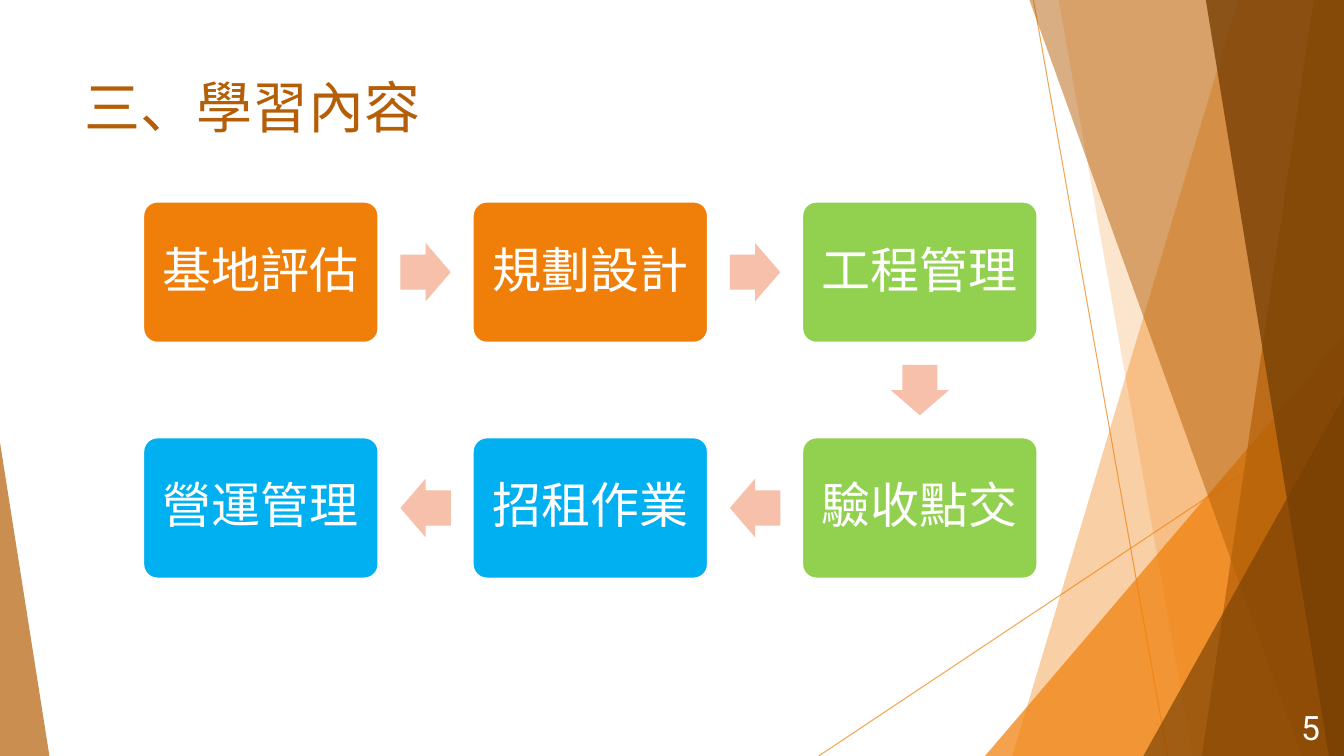
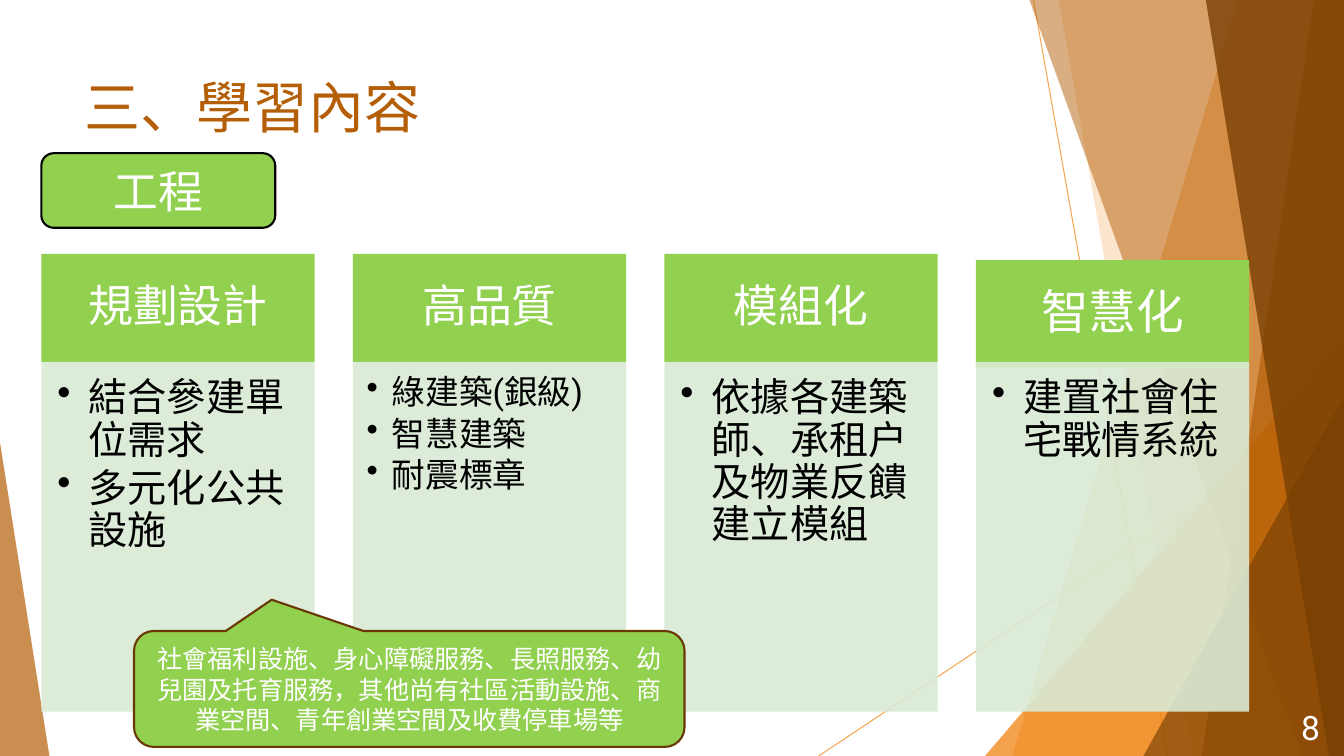
from dataclasses import dataclass
from itertools import pairwise

from lxml import etree
from pptx import Presentation
from pptx.dml.color import RGBColor
from pptx.enum.shapes import MSO_CONNECTOR, MSO_SHAPE
from pptx.enum.text import MSO_ANCHOR, PP_ALIGN
from pptx.oxml.ns import qn
from pptx.util import Inches, Pt

RECTANGLE = MSO_SHAPE.RECTANGLE
ROUNDED = MSO_SHAPE.ROUNDED_RECTANGLE
TRIANGLE = MSO_SHAPE.ISOSCELES_TRIANGLE
ARROW = MSO_SHAPE.RIGHT_ARROW
LABEL = MSO_SHAPE.FLOWCHART_ALTERNATE_PROCESS
CALLOUT = MSO_SHAPE.ROUNDED_RECTANGULAR_CALLOUT
STRAIGHT = MSO_CONNECTOR.STRAIGHT
LEFT, CENTER, RIGHT = PP_ALIGN.LEFT, PP_ALIGN.CENTER, PP_ALIGN.RIGHT
TOP, MIDDLE = MSO_ANCHOR.TOP, MSO_ANCHOR.MIDDLE

WIDTH, HEIGHT = 13.33, 7.5
TITLE = "三、學習內容"
TITLE_FONT, BODY_FONT = "Noto Sans CJK TC", "Roboto"
ORANGE, RUST, BROWN, DARK = "F07F09", "B45F07", "784004", "693804"
GREEN, BLUE, PALE, PINK = "92D050", "00B0F0", "D9EAD5", "F6C0AB"
WHITE, BLACK = "FFFFFF", "000000"
PLAIN_INSETS = (0.1, 0.05, 0.1, 0.05)
ARROW_SIZE = (0.5, 0.58)
HEADER_HEIGHT = 1.07

RAYS = [(10.25, 0, 11.58, HEIGHT), (WIDTH, 4.03, 8.12, HEIGHT)]
FACETS = [
    (12.28, 10.04, ORANGE, 36),
    (10.5, 11.83, ORANGE, 20),
    ((9.77, 3.33, 3.56, 4.17), 1, ORANGE, 72),
    (10.21, 12.91, RUST, 50),
    (13.03, 11.92, RUST, 70),
    (11.96, 13.18, BROWN, 80),
    ((11.34, 3.93, 1.99, 3.57), 1, BROWN, 66),
    ((0, 4.39, 0.49, 3.11), 0, RUST, 70),
]
STEPS = [
    ("基地評估", ORANGE, 0, 0),
    ("規劃設計", ORANGE, 1, 0),
    ("工程管理", GREEN, 2, 0),
    ("驗收點交", GREEN, 2, 1),
    ("招租作業", BLUE, 1, 1),
    ("營運管理", BLUE, 0, 1),
]
TOPICS = [
    ("規劃設計", 32, 0, ["結合參建單位需求", "多元化公共設施"], 28, 0.31),
    ("高品質", 32, 0, ["綠建築(銀級)", "智慧建築", "耐震標章"], 24, 0.25),
    ("模組化", 32, 0, ["依據各建築師、承租戶及物業反饋建立模組"], 28, 0.31),
    ("智慧化", 34, 0.06, ["建置社會住宅戰情系統"], 28, 0.31),
]
SERVICES = ("社會福利設施、身心障礙服務、長照服務、幼兒園及托育服務，"
            "其他尚有社區活動設施、商業空間、青年創業空間及收費停車場等")


@dataclass
class Box:
    """A rectangle in inches."""
    left: float
    top: float
    width: float
    height: float

    def cell(self, column, row, columns, rows, gap_x=0, gap_y=0):
        """Return a grid cell; gaps are shares of the cell size."""
        width = self.width / (columns + (columns - 1) * gap_x)
        height = self.height / (rows + (rows - 1) * gap_y)
        return Box(self.left + column * width * (1 + gap_x),
                   self.top + row * height * (1 + gap_y), width, height)

    def center(self):
        """Return the middle point."""
        return self.left + self.width / 2, self.top + self.height / 2

    def lengths(self):
        """Return the four lengths for python-pptx."""
        return [Inches(v) for v in (self.left, self.top, self.width, self.height)]


def paint(fill, color, alpha=100):
    """Give a fill a solid colour and an opacity in percent."""
    fill.solid()
    fill.fore_color.rgb = RGBColor.from_string(color)
    if alpha < 100:
        tone = fill._xPr.find(".//" + qn("a:srgbClr"))
        etree.SubElement(tone, qn("a:alpha"), val=str(alpha * 1000))


def finish(shape, color, alpha=100, line=None):
    """Set the fill and outline and drop the shadow."""
    shape.shadow.inherit = False
    paint(shape.fill, color, alpha)
    if line:
        paint(shape.line.fill, line)
        shape.line.width = Pt(1.5)
    else:
        shape.line.fill.background()
    return shape


def add_figure(page, kind, box, color, alpha=100, line=None, adjust=()):
    """Add a preset shape."""
    shape = page.shapes.add_shape(kind, *box.lengths())
    for index, value in enumerate(adjust):
        shape.adjustments[index] = value
    return finish(shape, color, alpha, line)


def write(shape, lines, size, color=WHITE, align=CENTER, anchor=MIDDLE,
          insets=PLAIN_INSETS, spacing=1.0, after=0, indent=0, font=BODY_FONT):
    """Fill a shape with paragraphs, bulleted when an indent is given."""
    frame = shape.text_frame
    frame.text = "\n".join(lines)
    frame.word_wrap = True
    frame.vertical_anchor = anchor
    (frame.margin_left, frame.margin_top,
     frame.margin_right, frame.margin_bottom) = map(Inches, insets)
    for para in frame.paragraphs:
        para.alignment = align
        para.line_spacing = spacing
        para.space_after = Pt(after)
        if indent:
            props = para._p.get_or_add_pPr()
            props.set("marL", str(Inches(indent)))
            props.set("indent", str(-Inches(indent)))
            etree.SubElement(props, qn("a:buChar"), char="•")
        for span in para.runs:
            span.font.name = font
            span.font.size = Pt(size)
            span.font.color.rgb = RGBColor.from_string(color)
            latin = span.font._element.find(qn("a:latin"))
            latin.addnext(latin.makeelement(qn("a:ea"), {"typeface": TITLE_FONT}))


def add_backdrop(page):
    """Draw the rays and the translucent facets."""
    for ray in RAYS:
        line = page.shapes.add_connector(STRAIGHT, *map(Inches, ray))
        paint(line.line.fill, ORANGE, 70)
        line.line.width = Pt(0.75)
        etree.SubElement(line._element.spPr, qn("a:effectLst"))
    for place, end, color, alpha in FACETS:
        if isinstance(place, tuple):
            add_figure(page, TRIANGLE, Box(*place), color, alpha, adjust=[end])
            continue
        corners = [(WIDTH, 0), (WIDTH, HEIGHT), (end, HEIGHT)]
        outline = page.shapes.build_freeform(Inches(place), 0)
        outline.add_line_segments([(Inches(x), Inches(y)) for x, y in corners])
        finish(outline.convert_to_shape(), color, alpha)


def add_page(deck, number):
    """Add a page with backdrop, title and number."""
    page = deck.slides.add_slide(deck.slide_layouts[6])
    add_backdrop(page)
    title = page.shapes.add_textbox(*Box(0.74, 0.67, 9.4, 1.44).lengths())
    write(title, [TITLE], 40, RUST, LEFT, TOP, font=TITLE_FONT)
    footer = page.shapes.add_textbox(*Box(12.44, 7.01, 0.75, 0.4).lengths())
    write(footer, [str(number)], 24, align=RIGHT)
    return page


def add_process(page, box):
    """Lay the steps out as a snake joined by arrows."""
    tiles = []
    for text, color, column, row in STEPS:
        tile = box.cell(column, row, 3, 2, 0.4, 0.67)
        shape = add_figure(page, ROUNDED, tile, color, line=WHITE, adjust=[0.1])
        write(shape, [text], 35, insets=[0.15] * 4, spacing=0.9)
        tiles.append(tile)
    width, height = ARROW_SIZE
    for start, end in pairwise(tiles):
        (x1, y1), (x2, y2) = start.center(), end.center()
        place = Box((x1 + x2 - width) / 2, (y1 + y2 - height) / 2, width, height)
        arrow = add_figure(page, ARROW, place, PINK, adjust=[0.6, 0.5])
        arrow.rotation = 90 if y2 > y1 else 0 if x2 > x1 else 180


def add_topic(page, box, topic):
    """Draw one column: header above a bulleted panel."""
    heading, heading_size, drop, points, size, indent = topic
    top = Box(box.left, box.top + drop, box.width, HEADER_HEIGHT)
    header = add_figure(page, RECTANGLE, top, GREEN)
    write(header, [heading], heading_size, insets=(0.25, 0.14, 0.25, 0.14), spacing=0.9)
    body = Box(box.left, box.top + HEADER_HEIGHT, box.width, box.height - HEADER_HEIGHT)
    panel = add_figure(page, RECTANGLE, body, PALE, 90)
    insets = [share * size / 28 for share in (0.16, 0.16, 0.22, 0.24)]
    write(panel, points, size, BLACK, LEFT, TOP, insets, 0.9, size * 0.15, indent)


def add_topics(page, box):
    """Place the topics in equal columns."""
    for column, topic in enumerate(TOPICS):
        add_topic(page, box.cell(column, 0, len(TOPICS), 1, 0.14), topic)


def main():
    """Build and save the deck."""
    deck = Presentation()
    deck.slide_width, deck.slide_height = Inches(WIDTH), Inches(HEIGHT)

    add_process(add_page(deck, 5), Box(1.42, 2, 8.87, 3.74))

    page = add_page(deck, 8)
    label = add_figure(page, LABEL, Box(0.41, 1.52, 2.32, 0.74), GREEN, line=BLACK)
    write(label, ["工程"], 32)
    add_topics(page, Box(0.41, 2.52, 11.98, 4.54))
    note = add_figure(page, CALLOUT, Box(1.33, 6.26, 5.46, 1.15), GREEN,
                      line=DARK, adjust=[-0.25, -0.77, 0.17])
    write(note, [SERVICES], 18)

    deck.save("out.pptx")


if __name__ == "__main__":
    main()
